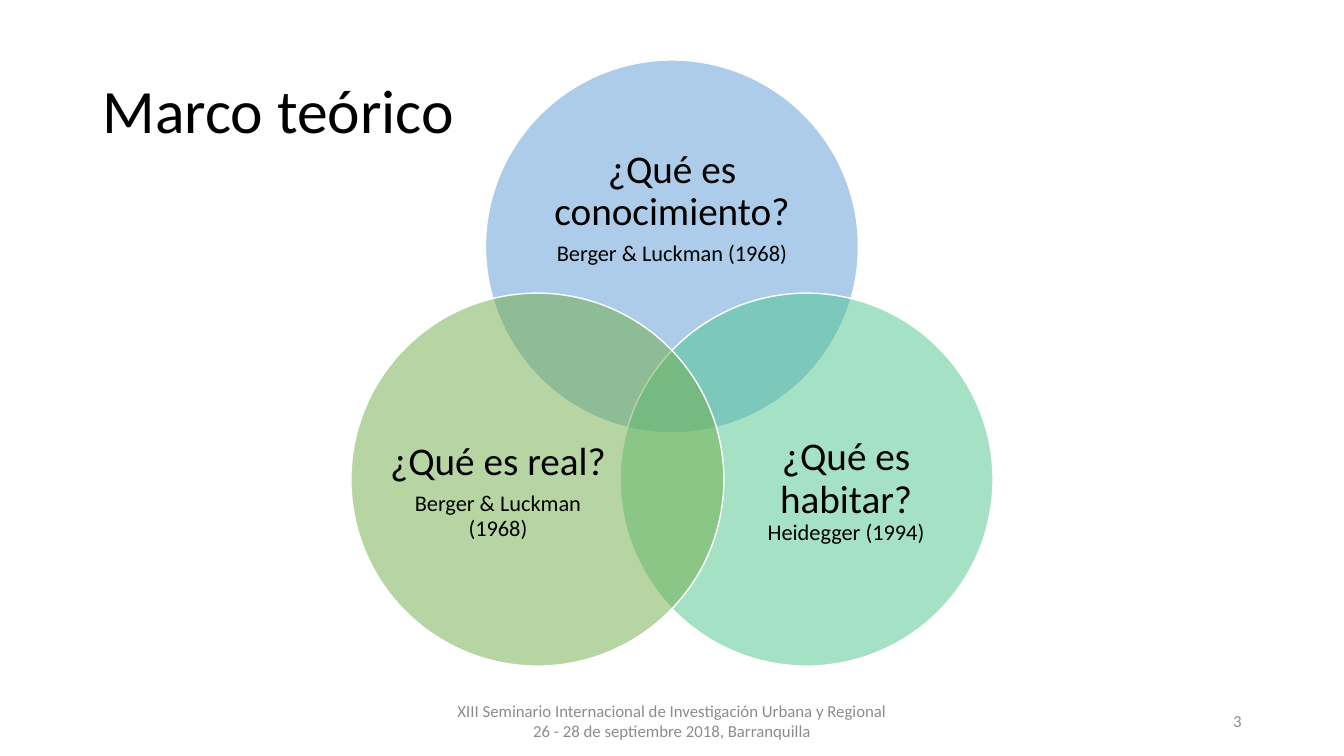
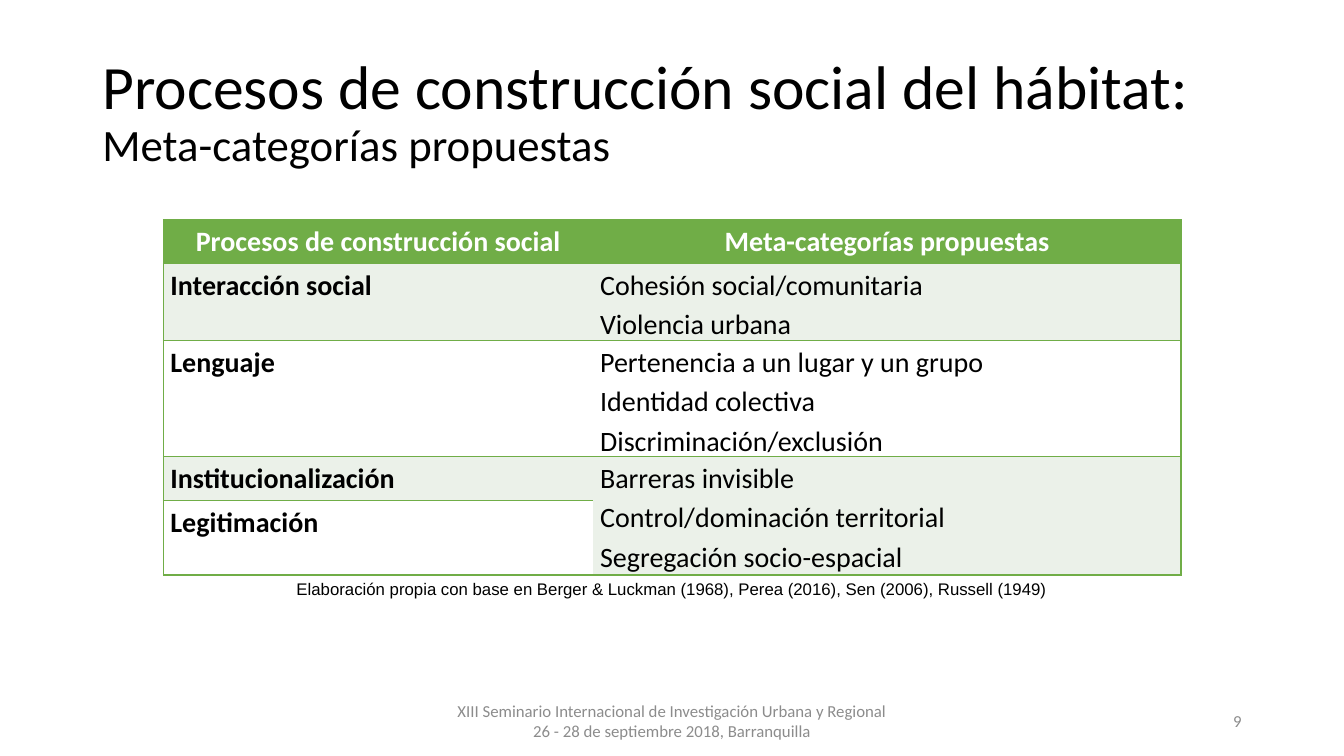
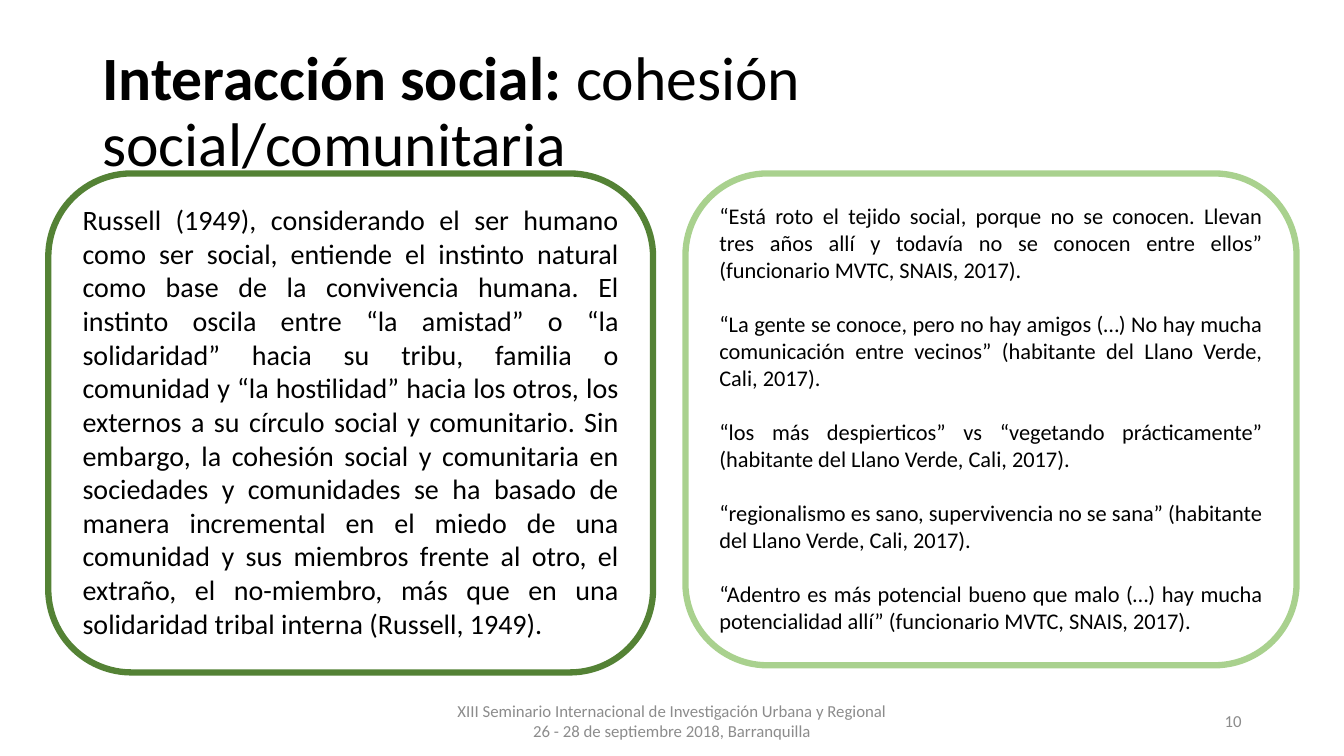
from math import cos, radians, sin

from lxml import etree
from pptx import Presentation
from pptx.dml.color import RGBColor
from pptx.enum.shapes import MSO_SHAPE
from pptx.enum.text import MSO_ANCHOR, PP_ALIGN
from pptx.oxml.ns import qn
from pptx.util import Inches, Pt

ELLIPSE, ROUNDED = MSO_SHAPE.OVAL, MSO_SHAPE.ROUNDED_RECTANGLE
TOP, MIDDLE = MSO_ANCHOR.TOP, MSO_ANCHOR.MIDDLE
LEFT, CENTER, RIGHT, JUSTIFY = PP_ALIGN.LEFT, PP_ALIGN.CENTER, PP_ALIGN.RIGHT, PP_ALIGN.JUSTIFY

# Grid: 160 columns by 90 rows of square cells
COLUMNS, ROWS = 160, 90
SLIDE_WIDTH, SLIDE_HEIGHT = Inches(13.33), Inches(7.5)
TITLE_AREA = (11, 4.8, 138, 17.4)
FOOTER_AREA = (53, 83.4, 54, 4.8)
NUMBER_AREA = (113, 83.4, 36, 4.8)

FOOTER = ("XIII Seminario Internacional de Investigación Urbana y Regional "
          "26 - 28 de septiembre 2018, Barranquilla")


class Theme:
    black, white, gray = "000000", "FFFFFF", "8C8C8C"
    blue, mint, green = "5B9BD5", "4DC58D", "70AD47"
    dark_green, light_green, pale_green = "548235", "A9D18E", "EBF1E9"

    # Each text style: font values, colour and paragraph values
    styles = {
        "title": ({"name": "Calibri", "size": Pt(44)}, black,
                  {"alignment": LEFT, "line_spacing": 0.9}),
        "circle": ({"name": "Calibri", "size": Pt(28)}, black,
                   {"alignment": CENTER, "line_spacing": 0.9, "space_after": Pt(6)}),
        "footer": ({"name": "Calibri", "size": Pt(12)}, gray, {"alignment": CENTER}),
        "number": ({"name": "Calibri", "size": Pt(12)}, gray, {"alignment": RIGHT}),
        "header": ({"name": "Calibri", "size": Pt(20), "bold": True}, white,
                   {"alignment": CENTER, "line_spacing": 1.15}),
        "cell": ({"name": "Calibri", "size": Pt(20)}, black,
                 {"alignment": JUSTIFY, "line_spacing": 1.15}),
        "source": ({"name": "Arial", "size": Pt(12)}, black,
                   {"alignment": CENTER, "line_spacing": 1.15, "space_after": Pt(8)}),
        "theory": ({"name": "Calibri", "size": Pt(20)}, black, {"alignment": JUSTIFY}),
        "quote": ({"name": "Calibri", "size": Pt(16)}, black, {"alignment": JUSTIFY}),
    }
    subtitle = {"size": Pt(32)}
    citation = {"size": Pt(16)}
    strong = {"bold": True}
    quote_gap = Pt(19.5)


def apply(target, values):
    for name, value in values.items():
        setattr(target, name, value)


def color(code):
    return RGBColor.from_string(code)


class Deck:
    def __init__(self):
        self.presentation = Presentation()
        apply(self.presentation, {"slide_width": SLIDE_WIDTH, "slide_height": SLIDE_HEIGHT})
        self.slide = None

    def across(self, columns):
        return round(SLIDE_WIDTH * columns / COLUMNS)

    def down(self, rows):
        return round(SLIDE_HEIGHT * rows / ROWS)

    def area(self, left, top, width, height):
        return self.across(left), self.down(top), self.across(width), self.down(height)

    # Slide frame: title, footer and number
    def new_slide(self, number, title):
        self.slide = self.presentation.slides.add_slide(self.presentation.slide_layouts[6])
        self.text(TITLE_AREA, [title], "title", MIDDLE)
        self.text(FOOTER_AREA, [FOOTER], "footer", MIDDLE)
        self.text(NUMBER_AREA, [str(number)], "number", MIDDLE)

    # A paragraph is a string or a list of (text, font changes); "\n" ends a line
    def add_paragraphs(self, frame, paragraphs, style, gap=None):
        font_values, font_color, paragraph_values = Theme.styles[style]
        for index, runs in enumerate(paragraphs):
            paragraph = frame.add_paragraph() if index else frame.paragraphs[0]
            apply(paragraph, paragraph_values)
            if index and gap:
                paragraph.space_before = gap
            for text, changes in [(runs, {})] if isinstance(runs, str) else runs:
                run = paragraph.add_run()
                run.text = text.rstrip("\n")
                apply(run.font, {**font_values, **changes})
                run.font.color.rgb = color(font_color)
                if text.endswith("\n"):
                    paragraph.add_line_break()

    def text(self, area, paragraphs, style, anchor=TOP, margin=None):
        frame = self.slide.shapes.add_textbox(*self.area(*area)).text_frame
        apply(frame, {"word_wrap": True, "vertical_anchor": anchor})
        if margin is not None:
            apply(frame, dict.fromkeys(
                ("margin_left", "margin_top", "margin_right", "margin_bottom"), margin))
        self.add_paragraphs(frame, paragraphs, style)

    def shape(self, kind, area, line, weight, fill=None, opacity=100):
        shape = self.slide.shapes.add_shape(kind, *self.area(*area))
        shape.shadow.inherit = False
        shape.line.color.rgb = color(line)
        shape.line.width = Pt(weight)
        if fill:
            shape.fill.solid()
            shape.fill.fore_color.rgb = color(fill)
            tone = shape.element.spPr.find(qn("a:solidFill"))[0]
            etree.SubElement(tone, qn("a:alpha"), val=str(opacity * 1000))
        else:
            shape.fill.background()
        return shape

    def panel(self, area, line, paragraphs, style, gap=None):
        frame = self.shape(ROUNDED, area, line, 4.5).text_frame
        apply(frame, {"word_wrap": True, "vertical_anchor": TOP})
        self.add_paragraphs(frame, paragraphs, style, gap)

    # Circles spaced evenly around a centre
    def venn(self, center, radius, diameter, circles):
        for index, (fill, shift, size, paragraphs) in enumerate(circles):
            angle = radians(360 / len(circles) * index - 90)
            x, y = center[0] + radius * cos(angle), center[1] + radius * sin(angle)
            self.shape(ELLIPSE, (x - diameter / 2, y - diameter / 2, diameter, diameter),
                       Theme.white, 1, fill, 50)
            label = (x + shift[0] - size[0] / 2, y + shift[1] - size[1] / 2, *size)
            self.text(label, paragraphs, "circle", MIDDLE, 0)

    def borders(self, cell, sides):
        properties = cell._tc.get_or_add_tcPr()
        for index, side in enumerate("LRTB"):
            line = etree.Element(qn(f"a:ln{side}"), w=str(Pt(1)))
            if side in sides:
                fill = etree.SubElement(line, qn("a:solidFill"))
                etree.SubElement(fill, qn("a:srgbClr"), val=Theme.green)
            else:
                etree.SubElement(line, qn("a:noFill"))
            properties.insert(index, line)

    # A row is a list of cells; None continues the cell above
    def table(self, left, top, widths, heights, rows):
        area = self.area(left, top, sum(widths), sum(heights))
        table = self.slide.shapes.add_table(len(rows), len(widths), *area).table
        for column, width in zip(table.columns, widths):
            column.width = self.across(width)
        for row, height in zip(table.rows, heights):
            row.height = self.down(height)
        for row_index, row in enumerate(rows):
            fill = Theme.pale_green if row_index % 2 else Theme.white
            for column_index, paragraphs in enumerate(row):
                cell = table.cell(row_index, column_index)
                apply(cell, {"margin_left": Inches(0.07), "margin_right": Inches(0.07),
                             "margin_top": 0, "margin_bottom": 0})
                cell.fill.solid()
                cell.fill.fore_color.rgb = color(fill if row_index else Theme.green)
                edges = "B" if paragraphs is None else "TB"
                self.borders(cell, edges + ("R" if column_index else "L"))
                if paragraphs is None:
                    table.cell(row_index - 1, column_index).merge(cell)
                else:
                    self.add_paragraphs(cell.text_frame, paragraphs,
                                        "cell" if row_index else "header")


def main():
    deck = Deck()

    # Theoretical framework
    deck.new_slide(3, "Marco teórico")
    luckman = [("Berger & Luckman (1968)", Theme.citation)]
    deck.venn((80, 47.85), 18.5, 44.4, [
        (Theme.blue, (0, -4.6), (32.5, 20), ["¿Qué es conocimiento?", luckman]),
        (Theme.mint, (4.7, 1.4), (26.6, 24.4),
         [[("¿Qué es habitar?\n", {}), ("Heidegger (1994)", Theme.citation)]]),
        (Theme.green, (-4.7, 1.4), (26.6, 24.4), ["¿Qué es real?", luckman]),
    ])

    # Proposed categories
    deck.new_slide(9, [("Procesos de construcción social del hábitat:\n", {}),
                       ("Meta-categorías propuestas", Theme.subtitle)])
    categories = [
        ("Interacción social", ["Cohesión social/comunitaria", "Violencia urbana"]),
        ("Lenguaje", ["Pertenencia a un lugar y un grupo", "Identidad colectiva",
                      "Discriminación/exclusión"]),
        ("Institucionalización", ["Barreras invisible", "Control/dominación territorial",
                                  "Segregación socio-espacial"]),
        ("Legitimación", None),
    ]
    header = [["Procesos de construcción social"], ["Meta-categorías propuestas"]]
    body = [[[[(process, Theme.strong)]], proposals] for process, proposals in categories]
    deck.table(19.45, 26.15, (51.15, 70), (5.2, 8.3, 12.7, 5.2, 8.9), [header] + body)
    deck.text((30, 68, 100, 3.84),
              ["Elaboración propia con base en Berger & Luckman (1968), Perea (2016), "
               "Sen (2006), Russell (1949)"], "source")

    # Social cohesion
    deck.new_slide(10, [("Interacción social: ", Theme.strong),
                        ("cohesión social/comunitaria", {})])
    deck.panel((81.6, 20.65, 72.75, 58.55), Theme.light_green, [
        "“Está roto el tejido social, porque no se conocen. Llevan tres años allí y todavía "
        "no se conocen entre ellos” (funcionario MVTC, SNAIS, 2017).",
        "“La gente se conoce, pero no hay amigos (…) No hay mucha comunicación entre "
        "vecinos” (habitante del Llano Verde, Cali, 2017).",
        "“los más despierticos” vs “vegetando prácticamente” (habitante del Llano Verde, "
        "Cali, 2017).",
        "“regionalismo es sano, supervivencia no se sana” (habitante del Llano Verde, "
        "Cali, 2017).",
        "“Adentro es más potencial bueno que malo (…) hay mucha potencialidad allí” "
        "(funcionario MVTC, SNAIS, 2017).",
    ], "quote", Theme.quote_gap)
    deck.panel((5.75, 20.65, 72, 59.4), Theme.dark_green, [
        "Russell (1949), considerando el ser humano como ser social, entiende el instinto "
        "natural como base de la convivencia humana. El instinto oscila entre “la amistad” "
        "o “la solidaridad” hacia su tribu, familia o comunidad y “la hostilidad” hacia los "
        "otros, los externos a su círculo social y comunitario. Sin embargo, la cohesión "
        "social y comunitaria en sociedades y comunidades se ha basado de manera incremental "
        "en el miedo de una comunidad y sus miembros frente al otro, el extraño, el "
        "no-miembro, más que en una solidaridad tribal interna (Russell, 1949).",
    ], "theory")

    deck.presentation.save("out.pptx")


if __name__ == "__main__":
    main()
